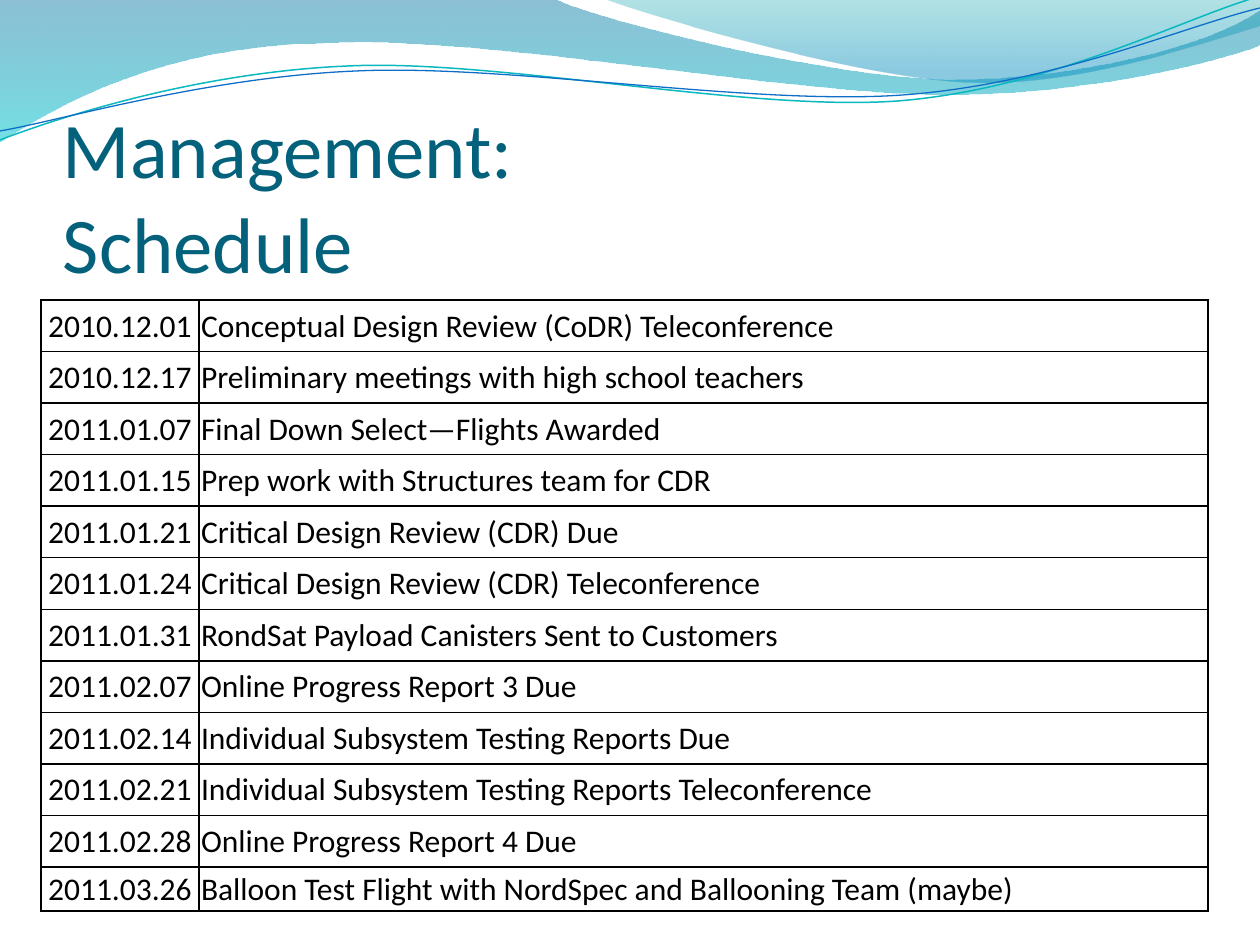
from math import cos, radians, sin

from lxml.etree import SubElement
from pptx import Presentation
from pptx.dml.color import RGBColor
from pptx.enum.text import MSO_ANCHOR as Anchor, PP_ALIGN as Align
from pptx.oxml.ns import qn
from pptx.util import Pt

EMU_PER_PX = 914400 / 126
FONT = "Calibri"
LINE_ROTATION = 357.3

BACK_WAVE = [(0, 0), (554, -1),
             (600, 21, 837, 79, 955, 79), (1075, 79, 1207, 47, 1260, 11), (1261, 45),
             (1239, 55, 1096, 96, 940, 94), (784, 94, 481, 35, 324, 43),
             (163, 45, 58, 105, -1, 142), (0, 0)]
FRONT_WAVE = [(604, -1), (641, 14, 859, 78, 969, 82),
              (1079, 87, 1211, 40, 1260, 26), (1260, 0), (604, -1)]
TEAL_LINE = [(0, 140), (60, 117, 199, 72, 349, 66),
             (498, 59, 747, 112, 898, 101), (1049, 89, 1182, 19, 1257, -3)]
BLUE_LINE = [(0, 131), (59, 121, 207, 77, 357, 71),
             (508, 64, 752, 106, 903, 95), (1053, 84, 1185, 26, 1260, 8)]

SCHEDULE = [
    ("2010.12.01", "Conceptual Design Review (CoDR) Teleconference"),
    ("2010.12.17", "Preliminary meetings with high school teachers"),
    ("2011.01.07", "Final Down Select—Flights Awarded"),
    ("2011.01.15", "Prep work with Structures team for CDR"),
    ("2011.01.21", "Critical Design Review (CDR) Due"),
    ("2011.01.24", "Critical Design Review (CDR) Teleconference"),
    ("2011.01.31", "RondSat Payload Canisters Sent to Customers"),
    ("2011.02.07", "Online Progress Report 3 Due"),
    ("2011.02.14", "Individual Subsystem Testing Reports Due"),
    ("2011.02.21", "Individual Subsystem Testing Reports Teleconference"),
    ("2011.02.28", "Online Progress Report 4 Due"),
    ("2011.03.26", "Balloon Test Flight with NordSpec and Ballooning Team (maybe)"),
]


def px(length):
    """Turn pixels into EMU."""
    return round(length * EMU_PER_PX)


def color(hex_string):
    """Turn a hex string into a colour."""
    return RGBColor.from_string(hex_string)


def add_run(paragraph, text, size, hex_string):
    """Add one styled run to a paragraph."""
    run = paragraph.add_run()
    run.text = text
    run.font.name = FONT
    run.font.size = Pt(size)
    run.font.color.rgb = color(hex_string)


def to_local(x, y, box, rotation):
    """Return a slide point in the EMU coordinates of a rotated box."""
    left, top, width, height = box
    angle = radians(-rotation)
    across, down = x - left - width / 2, y - top - height / 2
    return (px(across * cos(angle) - down * sin(angle) + width / 2),
            px(across * sin(angle) + down * cos(angle) + height / 2))


def add_outline(slide, box, segments, close, rotation=0):
    """Add a freeform of straight (2 numbers) and cubic (6 numbers) segments."""
    groups = [[to_local(x, y, box, rotation) for x, y in zip(segment[::2], segment[1::2])]
              for segment in segments]
    builder = slide.shapes.build_freeform(*groups[0][0])
    builder.add_line_segments([group[-1] for group in groups[1:]], close=close)
    shape = builder.convert_to_shape()
    shape.shadow.inherit = False
    shape.left, shape.top, shape.width, shape.height = map(px, box)
    shape.rotation = rotation
    outline = next(shape._element.iter(qn("a:path")))
    outline.set("w", str(px(box[2])))
    outline.set("h", str(px(box[3])))
    for child in list(outline):
        outline.remove(child)
    for index, group in enumerate(groups):
        tag = "a:moveTo" if index == 0 else "a:lnTo" if len(group) == 1 else "a:cubicBezTo"
        command = SubElement(outline, qn(tag))
        for x, y in group:
            SubElement(command, qn("a:pt"), x=str(x), y=str(y))
    if close:
        SubElement(outline, qn("a:close"))
    return shape


def add_wave(slide, box, segments, stops):
    """Add a filled wave with a downward translucent gradient."""
    shape = add_outline(slide, box, segments, True)
    shape.line.fill.background()
    shape.fill.gradient()
    shape.fill.gradient_angle = 270
    for stop, (position, hex_string, _) in zip(shape.fill.gradient_stops, stops):
        stop.position = position
        stop.color.rgb = color(hex_string)
    gradient = shape._element.spPr.find(qn("a:gradFill"))
    for rgb, (_, _, opacity) in zip(gradient.iter(qn("a:srgbClr")), stops):
        SubElement(rgb, qn("a:alpha"), val=str(opacity * 1000))


def add_curve(slide, box, segments, hex_string, width):
    """Add an open, slightly rotated curved line."""
    shape = add_outline(slide, box, segments, False, LINE_ROTATION)
    shape.fill.background()
    shape.line.color.rgb = color(hex_string)
    shape.line.width = Pt(width)


def add_header(slide):
    """Draw the waves and lines along the top edge."""
    add_wave(slide, (-1, -1, 1262, 143), BACK_WAVE, [(0, "0074A1", 45), (1, "00C6CF", 55)])
    add_wave(slide, (604, -1, 656, 88), FRONT_WAVE, [(0, "00A1A9", 30), (0.8, "008BBF", 45)])
    add_curve(slide, (-3, 28, 1263, 89), TEAL_LINE, "0AB8BF", 0.85)
    add_curve(slide, (-3, 38, 1264, 73), BLUE_LINE, "0F6FC6", 0.75)


def add_title(slide, left, top, width, height):
    """Add the two-line title, set on the bottom of its box."""
    frame = slide.shapes.add_textbox(px(left), px(top), px(width), px(height)).text_frame
    frame.word_wrap = True
    frame.vertical_anchor = Anchor.BOTTOM
    frame.margin_left = frame.margin_right = frame.margin_bottom = 0
    frame.margin_top = px(6)
    paragraph = frame.paragraphs[0]
    add_run(paragraph, "Management:", 45, "04617B")
    paragraph.add_line_break()
    add_run(paragraph, "Schedule", 45, "04617B")


def add_borders(cell, hex_string, width):
    """Draw a solid line on all four sides of a cell."""
    properties = cell._tc.get_or_add_tcPr()
    for index, side in enumerate(("a:lnL", "a:lnR", "a:lnT", "a:lnB")):
        line = SubElement(properties, qn(side), w=str(Pt(width)))
        fill = SubElement(line, qn("a:solidFill"))
        SubElement(fill, qn("a:srgbClr"), val=hex_string)
        properties.insert(index, line)


def add_schedule(slide, left, top, width, height):
    """Add the table of dates and events."""
    date_width, last_height = 158, 44
    row_height = (height - last_height) / (len(SCHEDULE) - 1)
    table = slide.shapes.add_table(len(SCHEDULE), 2, px(left), px(top), px(width), px(height)).table
    table.first_row = table.horz_banding = False
    table.columns[0].width = px(date_width)
    table.columns[1].width = px(width - date_width)
    for row, texts in zip(table.rows, SCHEDULE):
        row.height = px(row_height)
        for cell, text, align in zip(row.cells, texts, (Align.CENTER, Align.LEFT)):
            cell.fill.background()
            cell.vertical_anchor = Anchor.MIDDLE
            cell.margin_left = cell.margin_right = px(2)
            cell.margin_top = px(1)
            cell.margin_bottom = 0
            paragraph = cell.text_frame.paragraphs[0]
            paragraph.alignment = align
            add_run(paragraph, text, 18, "000000")
            add_borders(cell, "000000", 1)
    table.rows[len(SCHEDULE) - 1].height = px(last_height)


def main():
    """Build and save the schedule slide."""
    presentation = Presentation()
    presentation.slide_width = px(1260)
    presentation.slide_height = px(945)
    slide = presentation.slides.add_slide(presentation.slide_layouts[6])
    add_header(slide)
    add_title(slide, 63, 132, 1134, 157)
    add_schedule(slide, 41, 300, 1167, 611)
    presentation.save("out.pptx")


if __name__ == "__main__":
    main()
